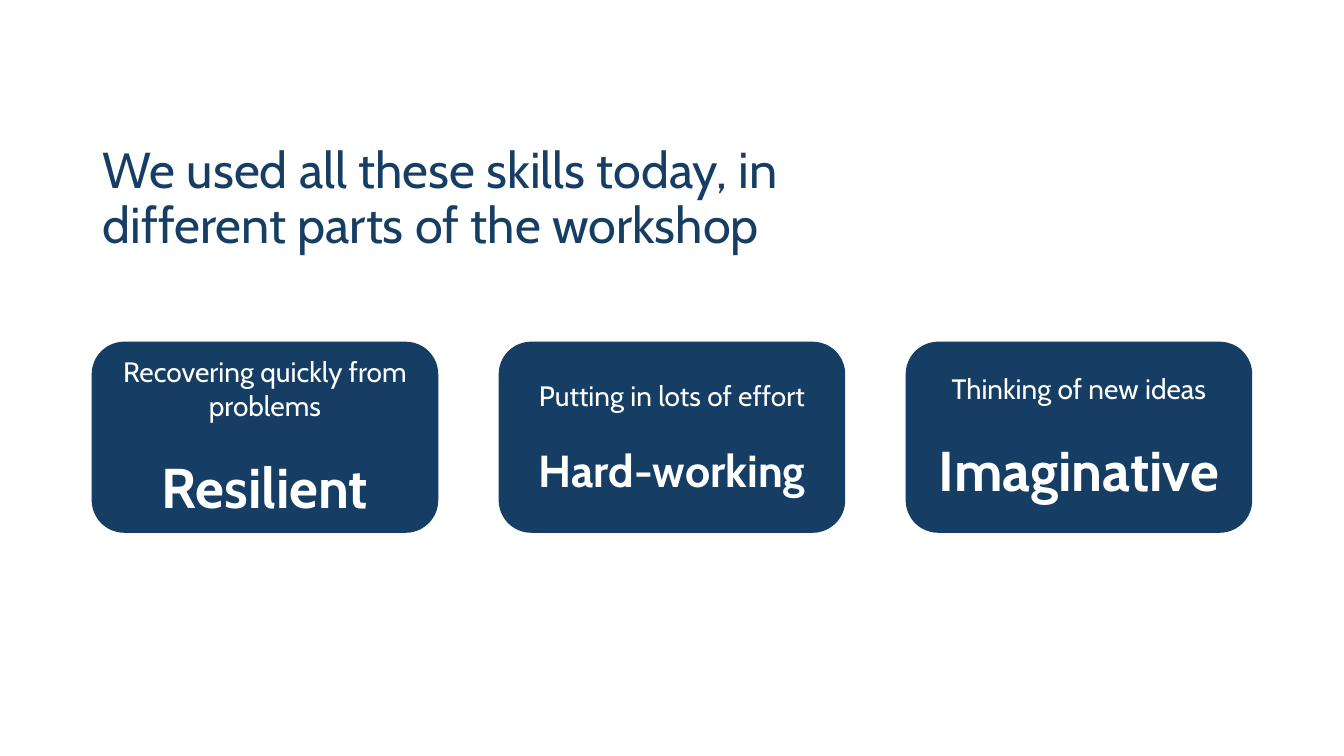
from pptx import Presentation
from pptx.dml.color import RGBColor
from pptx.enum.shapes import MSO_SHAPE
from pptx.enum.text import MSO_ANCHOR, MSO_AUTO_SIZE, PP_ALIGN
from pptx.util import Inches, Pt

ROUNDED = MSO_SHAPE.ROUNDED_RECTANGLE
MIDDLE = MSO_ANCHOR.MIDDLE
NO_AUTOFIT = MSO_AUTO_SIZE.NONE
LEFT, CENTER = PP_ALIGN.LEFT, PP_ALIGN.CENTER

COLORS = {"navy": "163E64", "white": "FFFFFF"}
FONT = "Cabin"
TITLE_ONLY = 5
SLIDE_WIDTH, SLIDE_HEIGHT = 13.33, 7.5
MARGIN = 0.92
CARD_GAP = 0.62
SKILL_SPACING = 22

HEADING = "We used all these skills today, in different parts of the workshop"
SKILLS = [
    ("Recovering quickly from problems", "Resilient", 40),
    ("Putting in lots of effort", "Hard-working", 32),
    ("Thinking of new ideas", "Imaginative", 40),
]


def color(name):
    return RGBColor.from_string(COLORS[name])


def write(paragraph, text, size, color_name, align, bold=False):
    paragraph.text = text
    paragraph.alignment = align
    font = paragraph.runs[0].font
    font.name = FONT
    font.size = Pt(size)
    font.bold = bold
    font.color.rgb = color(color_name)


def place_heading(slide, left, top, width, height):
    heading = slide.shapes.title
    heading.left, heading.top = Inches(left), Inches(top)
    heading.width, heading.height = Inches(width), Inches(height)
    frame = heading.text_frame
    frame.auto_size = NO_AUTOFIT
    frame.vertical_anchor = MIDDLE
    write(frame.paragraphs[0], HEADING, 36, "navy", LEFT)
    frame.paragraphs[0].line_spacing = 0.9


def add_skill_card(slide, left, top, width, height, meaning, skill, skill_size):
    card = slide.shapes.add_shape(
        ROUNDED, Inches(left), Inches(top), Inches(width), Inches(height))
    card.shadow.inherit = False
    card.fill.solid()
    card.fill.fore_color.rgb = color("navy")
    card.line.color.rgb = color("navy")
    card.line.width = Pt(1.5)
    frame = card.text_frame
    frame.word_wrap = True
    frame.vertical_anchor = MIDDLE
    write(frame.paragraphs[0], meaning, 20, "white", CENTER)
    skill_line = frame.add_paragraph()
    write(skill_line, skill, skill_size, "white", CENTER, bold=True)
    skill_line.space_before = Pt(SKILL_SPACING)


def add_skill_row(slide, left, top, width, height):
    card_width = (width - CARD_GAP * (len(SKILLS) - 1)) / len(SKILLS)
    for column, skill in enumerate(SKILLS):
        card_left = left + column * (card_width + CARD_GAP)
        add_skill_card(slide, card_left, top, card_width, height, *skill)


def main():
    deck = Presentation()
    deck.slide_width = Inches(SLIDE_WIDTH)
    deck.slide_height = Inches(SLIDE_HEIGHT)
    slide = deck.slides.add_slide(deck.slide_layouts[TITLE_ONLY])
    place_heading(slide, MARGIN, 1.11, SLIDE_WIDTH * 0.56, 1.74)
    add_skill_row(slide, MARGIN, 3.4, SLIDE_WIDTH - 2 * MARGIN, SLIDE_HEIGHT * 0.25)
    deck.save("out.pptx")


if __name__ == "__main__":
    main()
